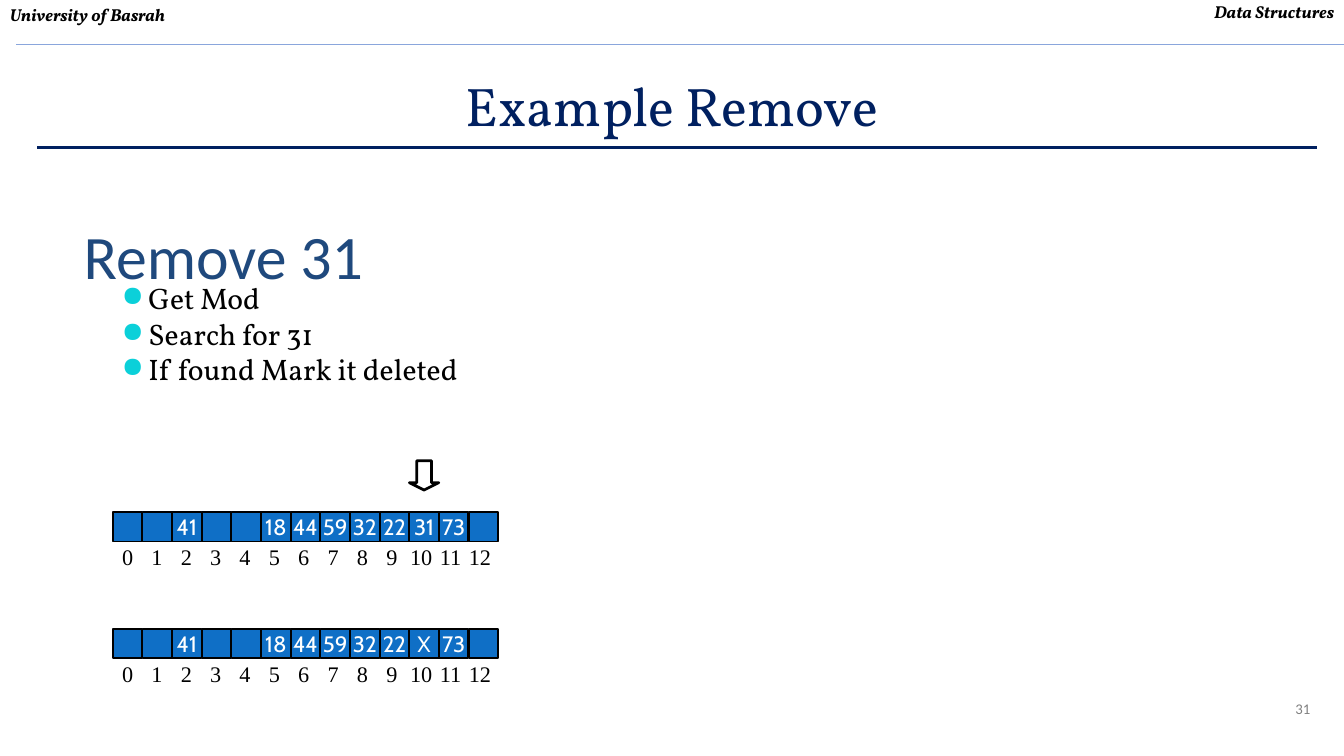
from dataclasses import dataclass

from lxml.etree import SubElement
from pptx import Presentation
from pptx.dml.color import RGBColor
from pptx.enum.shapes import MSO_CONNECTOR, MSO_SHAPE
from pptx.enum.text import MSO_ANCHOR, PP_ALIGN
from pptx.oxml.ns import qn
from pptx.util import Inches, Pt

TITLE = "Example Remove"
UNIVERSITY = "University of Basrah"
COURSE = "Data Structures"
PAGE_NUMBER = "31"
OPERATION = "Remove 31"
STEPS = ["Get Mod", "Search for 31", "If found Mark it deleted"]
BEFORE = ["", "", "41", "", "", "18", "44", "59", "32", "22", "31", "73", ""]
REMOVED_INDEX = BEFORE.index("31")
AFTER = ["X" if value == "31" else value for value in BEFORE]
HASH_TABLES = [(5.76, BEFORE), (7.07, AFTER)]
RULES = [(0.18, 15.11, 0.5, "8AA6DC", 1.5), (0.42, 14.81, 1.66, "002060", 2)]

TABLE_LEFT = 1.27
CELL_PITCH = 1 / 3
CELL_SIZE = 0.33
LABEL_PITCH = 0.33
LABEL_WIDTH = 0.45
LABEL_DROP = 0.3
ARROW_TOP = 5.18


@dataclass(frozen=True)
class Theme:
    serif: str = "Vollkorn"
    sans: str = "Calibri"
    cell_font: str = "Cabin"
    label_font: str = "Times New Roman"
    navy: str = "002060"
    heading: str = "1F497D"
    black: str = "000000"
    white: str = "FFFFFF"
    gray: str = "808080"
    cell: str = "0F6FC6"
    bullet: str = "0BD0D9"
    title_size: int = 44
    heading_size: int = 50
    body_size: int = 24
    table_size: int = 18
    header_size: int = 14
    page_size: int = 12


THEME = Theme()


def color(value):
    return RGBColor.from_string(value)


def write(shape, lines, font, size, ink, align=PP_ALIGN.LEFT, anchor=MSO_ANCHOR.TOP,
          margins=(0.1, 0.05, 0.1, 0.05), wrap=True, slanted=False, bullets=False):
    frame = shape.text_frame
    frame.text = "\n".join(lines)
    frame.word_wrap = wrap
    frame.vertical_anchor = anchor
    (frame.margin_left, frame.margin_top,
     frame.margin_right, frame.margin_bottom) = map(Inches, margins)
    for paragraph in frame.paragraphs:
        paragraph.alignment = align
        if bullets:
            add_bullet(paragraph)
        for run in paragraph.runs:
            run.font.name = font
            run.font.size = Pt(size)
            run.font.color.rgb = color(ink)
            if slanted:
                run.font.bold = run.font.italic = True


def add_bullet(paragraph):
    properties = paragraph._p.get_or_add_pPr()
    properties.set("marL", str(Inches(0.3)))
    properties.set("indent", str(Inches(-0.3)))
    bullet_color = SubElement(properties, qn("a:buClr"))
    SubElement(bullet_color, qn("a:srgbClr"), val=THEME.bullet)
    SubElement(properties, qn("a:buSzPct"), val="95000")
    SubElement(properties, qn("a:buChar"), char="●")


def add_text(slide, box, lines, *style, **options):
    shape = slide.shapes.add_textbox(*map(Inches, box))
    write(shape, lines, *style, **options)


def add_rule(slide, left, right, top, ink, width):
    rule = slide.shapes.add_connector(
        MSO_CONNECTOR.STRAIGHT, Inches(left), Inches(top), Inches(right), Inches(top))
    rule.line.color.rgb = color(ink)
    rule.line.width = Pt(width)
    SubElement(rule._element.spPr, qn("a:effectLst"))


def add_outlined(slide, kind, left, top, width):
    shape = slide.shapes.add_shape(
        kind, Inches(left), Inches(top), Inches(CELL_SIZE), Inches(CELL_SIZE))
    shape.shadow.inherit = False
    shape.line.color.rgb = color(THEME.black)
    shape.line.width = Pt(width)
    return shape


def add_hash_table(slide, top, values):
    centered = {"align": PP_ALIGN.CENTER, "wrap": False}
    for index, value in enumerate(values):
        cell = add_outlined(
            slide, MSO_SHAPE.RECTANGLE, TABLE_LEFT + index * CELL_PITCH, top, 1.5)
        cell.fill.solid()
        cell.fill.fore_color.rgb = color(THEME.cell)
        if value:
            write(cell, [value], THEME.cell_font, THEME.table_size, THEME.white,
                  anchor=MSO_ANCHOR.MIDDLE, margins=(0, 0, 0, 0), **centered)
    for index in range(len(values)):
        left = TABLE_LEFT + index * LABEL_PITCH - (LABEL_WIDTH - CELL_SIZE) / 2
        add_text(slide, (left, top + LABEL_DROP, LABEL_WIDTH, 0.4), [str(index)],
                 THEME.label_font, THEME.table_size, THEME.black, **centered)


def main():
    """Build the slide on removing a key from a hash table."""
    presentation = Presentation()
    presentation.slide_width, presentation.slide_height = Inches(15.11), Inches(8.5)
    slide = presentation.slides.add_slide(presentation.slide_layouts[5])

    title = slide.shapes.title
    title.left, title.top, title.width, title.height = map(Inches, (0, 0.5, 15.11, 1.15))
    write(title, [TITLE], THEME.serif, THEME.title_size, THEME.navy,
          align=PP_ALIGN.CENTER, anchor=MSO_ANCHOR.MIDDLE, margins=(0.1, 0.25, 0.1, 0.05))

    header = (THEME.serif, THEME.header_size, THEME.black)
    add_text(slide, (0.01, 0, 7.85, 0.34), [UNIVERSITY], *header, slanted=True)
    add_text(slide, (0, -0.03, 15.1, 0.34), [COURSE], *header,
             align=PP_ALIGN.RIGHT, slanted=True)
    add_text(slide, (13.16, 7.82, 1.67, 0.7), [PAGE_NUMBER], THEME.sans, THEME.page_size,
             THEME.gray, align=PP_ALIGN.RIGHT)
    for rule in RULES:
        add_rule(slide, *rule)

    add_text(slide, (0.94, 2.03, 9, 1.25), [OPERATION], THEME.sans, THEME.heading_size,
             THEME.heading, anchor=MSO_ANCHOR.BOTTOM, margins=(0, 0.05, 0, 0))
    add_text(slide, (1.27, 3.1, 4.17, 2.42), STEPS, THEME.serif, THEME.body_size,
             THEME.black, bullets=True)

    for top, values in HASH_TABLES:
        add_hash_table(slide, top, values)
    arrow = add_outlined(slide, MSO_SHAPE.DOWN_ARROW,
                         TABLE_LEFT + REMOVED_INDEX * CELL_PITCH, ARROW_TOP, 2.25)
    arrow.adjustments[0], arrow.adjustments[1] = 0.5, 0.25
    arrow.fill.background()
    presentation.save("out.pptx")


if __name__ == "__main__":
    main()
